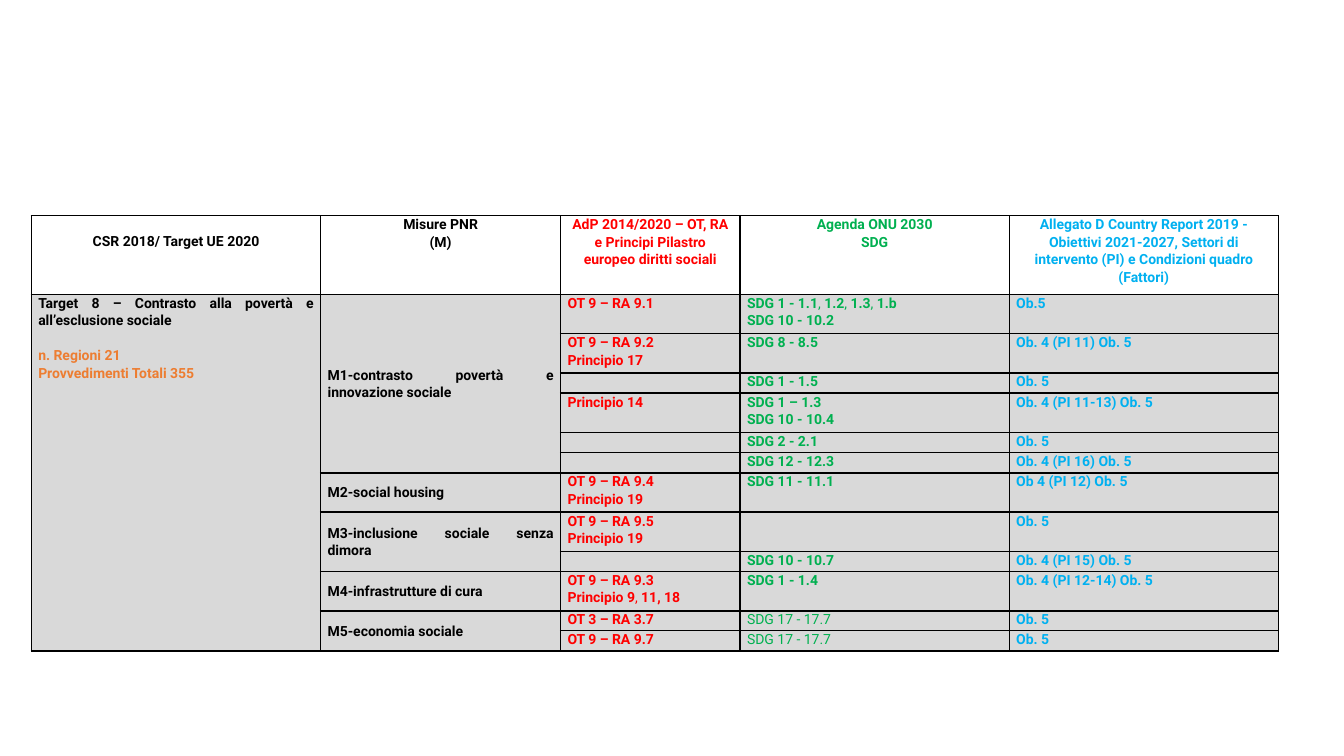
from lxml.etree import SubElement
from pptx import Presentation
from pptx.dml.color import RGBColor
from pptx.enum.text import MSO_ANCHOR as ANCHOR, PP_ALIGN as ALIGN
from pptx.oxml.ns import qn
from pptx.util import Inches, Pt

COLORS = {"black": "000000", "red": "FF0000", "green": "00B050", "blue": "00B0F0",
          "orange": "ED7D31", "gray": "D9D9D9"}
FONT = "Roboto"
SIZE = 10
COL_WIDTHS = [2.87, 2.38, 1.78, 2.67, 2.67]
COL_COLORS = ["black", "black", "red", "green", "blue"]
HEADERS = [
    "CSR 2018/ Target UE 2020",
    "Misure PNR\n(M)",
    "AdP 2014/2020 – OT, RA e Principi Pilastro europeo diritti sociali",
    "Agenda ONU 2030\nSDG",
    "Allegato D Country Report 2019 - Obiettivi 2021-2027, Settori di intervento (PI) "
    "e Condizioni quadro (Fattori)",
]
TARGET = "Target 8 – Contrasto alla povertà e all’esclusione sociale"
TOTALS = "n. Regioni 21\nProvvedimenti Totali 355"
MEASURES = [
    ("M1-contrasto povertà e innovazione sociale", [
        ("OT 9 – RA 9.1", "SDG 1 - 1.1|,| 1.2|, |1.3|, |1.b\nSDG 10 - 10.2", "Ob.5"),
        ("OT 9 – RA 9.2\nPrincipio 17", "SDG 8 - 8.5", "Ob. 4 (PI 11) Ob. 5"),
        ("", "SDG 1 - 1.5", "Ob. 5"),
        ("Principio 14", "SDG 1 – 1.3\nSDG 10 - 10.4", "Ob. 4 (PI 11-13) Ob. 5"),
        ("", "SDG 2 - 2.1", "Ob. 5"),
        ("", "SDG 12 - 12.3", "Ob. 4 (PI 16) Ob. 5"),
    ]),
    ("M2-social housing", [
        ("OT 9 – RA 9.4\nPrincipio 19", "SDG 11 - 11.1", "Ob 4 (PI 12) Ob. 5"),
    ]),
    ("M3-inclusione sociale senza dimora", [
        ("OT 9 – RA 9.5\nPrincipio 19", "", "Ob. 5"),
        ("", "SDG 10 - 10.7", "Ob. 4 (PI 15) Ob. 5"),
    ]),
    ("M4-infrastrutture di cura", [
        ("OT 9 – RA 9.3\nPrincipio 9|, |11, 18", "SDG 1 - 1.4", "Ob. 4 (PI 12-14) Ob. 5"),
    ]),
    ("M5-economia sociale", [
        ("OT 3 – RA 3.7", "|SDG 17 - 17.7", "Ob. 5"),
        ("OT 9 – RA 9.7", "|SDG 17 - 17.7", "Ob. 5"),
    ]),
]


def write_paragraph(p, text, color="black", align=ALIGN.JUSTIFY, before=0):
    """Write one bold line; each bar in the text switches bold off or on."""
    p.alignment = align
    p.line_spacing = 1.07
    if before:
        p.space_before = Pt(before)
    for i, part in enumerate(text.split("|")):
        if part:
            r = p.add_run()
            r.text = part
            r.font.name = FONT
            r.font.size = Pt(SIZE)
            r.font.bold = i % 2 == 0
            r.font.color.rgb = RGBColor.from_string(COLORS[color])
    if not text:
        SubElement(p._p, qn("a:endParaRPr"), sz=str(SIZE * 100))


def write_cell(cell, text, anchor=ANCHOR.TOP, top=0, **fmt):
    """Fill a cell with one paragraph per line of text."""
    cell.margin_left = cell.margin_right = Inches(0.07)
    cell.margin_top, cell.margin_bottom = Inches(top), Inches(0)
    cell.vertical_anchor = anchor
    tf = cell.text_frame
    for i, line in enumerate(text.split("\n")):
        p = tf.add_paragraph() if i else tf.paragraphs[0]
        write_paragraph(p, line, **fmt)


def style_cell(cell, top, bottom, fill=None):
    """Draw the four borders of a cell, then set its fill."""
    tc_pr = cell._tc.get_or_add_tcPr()
    for side, width in (("L", 1), ("R", 1), ("T", top), ("B", bottom)):
        ln = SubElement(tc_pr, qn(f"a:ln{side}"), w=str(Pt(width)))
        SubElement(SubElement(ln, qn("a:solidFill")), qn("a:srgbClr"), val=COLORS["black"])
    if fill:
        cell.fill.solid()
        cell.fill.fore_color.rgb = RGBColor.from_string(COLORS[fill])
    else:
        cell.fill.background()


def add_grid(s, heights):
    """Add an unstyled table with the given row heights."""
    table = s.shapes.add_table(len(heights), len(COL_WIDTHS), Inches(0.31), Inches(2.14),
                               Inches(sum(COL_WIDTHS)), Inches(sum(heights))).table
    table.first_row = table.horz_banding = False
    for col, width in zip(table.columns, COL_WIDTHS):
        col.width = Inches(width)
    for row, height in zip(table.rows, heights):
        row.height = Inches(height)
    return table


def write_headers(table):
    """Write the header row."""
    for c, (text, color) in enumerate(zip(HEADERS, COL_COLORS)):
        write_cell(table.cell(0, c), text, top=0 if c else 0.17,
                   color=color, align=ALIGN.CENTER)


def write_target(table, last):
    """Write the target cell that spans all measures."""
    cell = table.cell(1, 0)
    cell.merge(table.cell(last, 0))
    write_cell(cell, TARGET)
    for i, line in enumerate(TOTALS.split("\n")):
        write_paragraph(cell.text_frame.add_paragraph(), line, color="orange",
                        before=0 if i else 12.5)


def write_measures(table):
    """Write each measure with its rows and return the last row of each."""
    ends, r = [], 1
    for name, rows in MEASURES:
        end = r + len(rows) - 1
        cell = table.cell(r, 1)
        if end > r:
            cell.merge(table.cell(end, 1))
        write_cell(cell, name, anchor=ANCHOR.MIDDLE)
        for r, texts in enumerate(rows, r):
            for c, text in enumerate(texts, 2):
                write_cell(table.cell(r, c), text, color=COL_COLORS[c],
                           align=ALIGN.LEFT if c == 4 else ALIGN.JUSTIFY)
        ends.append(end)
        r = end + 1
    return ends


def style_grid(table, ends):
    """Style all cells, with a heavier line under each measure."""
    for r in range(len(table.rows)):
        for c in range(len(COL_WIDTHS)):
            cell = table.cell(r, c)
            last = r + cell.span_height - 1 if cell.is_merge_origin else r
            style_cell(cell, top=1.5 if c and r - 1 in ends else 1,
                       bottom=1.5 if c and last in ends else 1,
                       fill="gray" if r else None)


def main():
    """Build the slide and save it."""
    prs = Presentation()
    prs.slide_width, prs.slide_height = Inches(13.33), Inches(7.5)
    s = prs.slides.add_slide(prs.slide_layouts[6])
    heights = [0.78] + [0.39 if "\n" in "".join(texts) else 0.2
                        for _, rows in MEASURES for texts in rows]
    table = add_grid(s, heights)
    write_headers(table)
    write_target(table, len(heights) - 1)
    style_grid(table, write_measures(table))
    prs.save("out.pptx")


if __name__ == "__main__":
    main()
